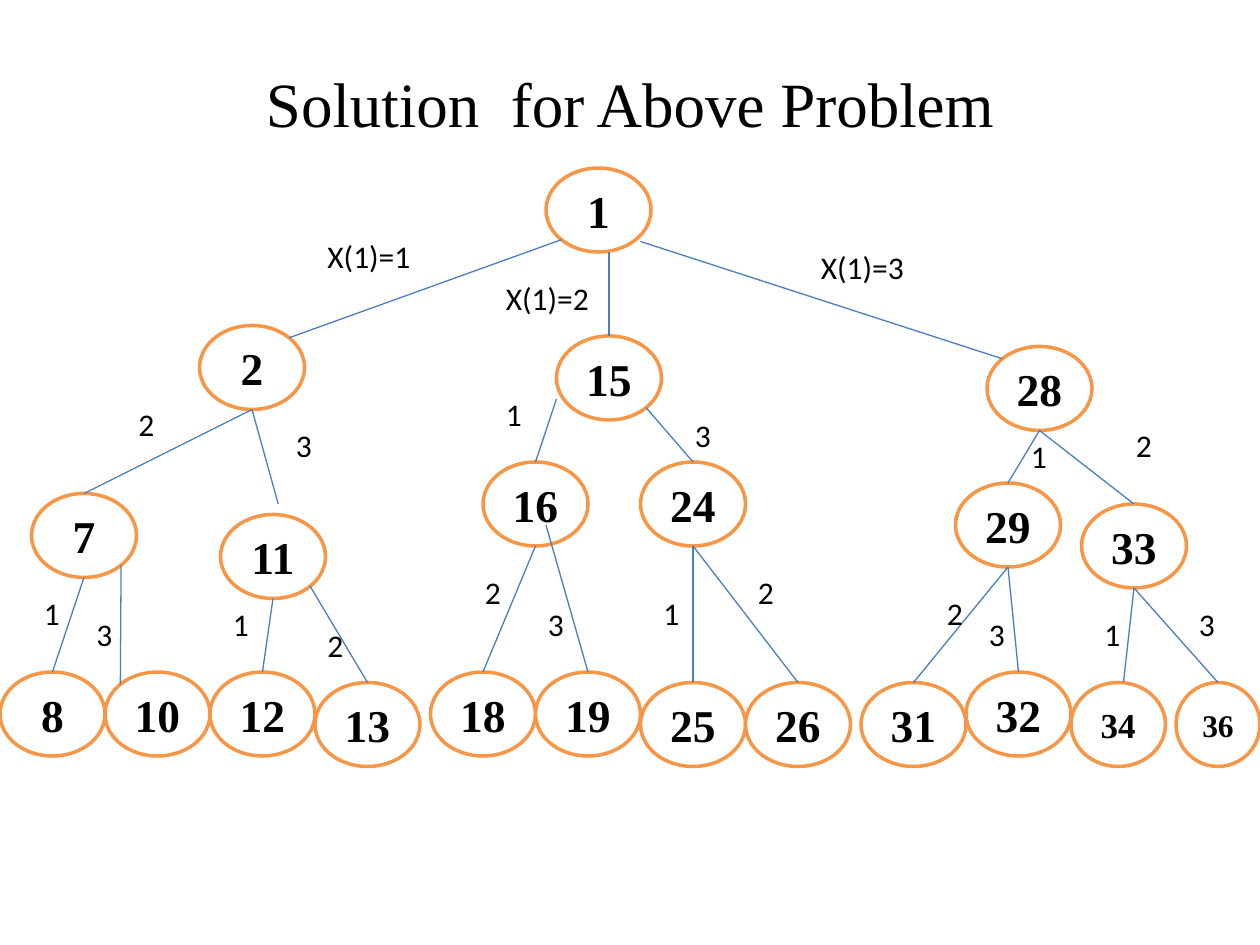
import math

import pptx
import pptx.dml.color
import pptx.enum.shapes
import pptx.enum.text
import pptx.oxml
import pptx.util

BLACK = pptx.dml.color.RGBColor(0x00, 0x00, 0x00)
WHITE = pptx.dml.color.RGBColor(0xFF, 0xFF, 0xFF)
ORANGE = pptx.dml.color.RGBColor(0xF7, 0x96, 0x46)
BLUE = pptx.dml.color.RGBColor(0x4B, 0x7E, 0xBC)
SERIF, SANS = "Times New Roman", "Calibri"
CENTER = pptx.enum.text.PP_ALIGN.CENTER
LEFT = pptx.enum.text.PP_ALIGN.LEFT

CELLS_PER_INCH = 12
NODE_WIDTH, NODE_HEIGHT = 10, 8
LABEL_HEIGHT = 4.8

# Left column and top row of each tree node
NODES = {
    1: (52, 16),
    2: (19, 31), 15: (53, 32), 28: (94, 33),
    7: (3, 47), 11: (21, 49), 16: (46, 44), 24: (61, 44), 29: (91, 46), 33: (103, 48),
    8: (0, 64), 10: (10, 64), 12: (20, 64), 13: (30, 65),
    18: (41, 64), 19: (51, 64), 25: (61, 65), 26: (71, 65),
    31: (82, 65), 32: (92, 64), 34: (102, 65), 36: (112, 65),
}
# Width and text size of the smaller leaves
SMALL_NODES = {34: (9, 20), 36: (8, 18)}

# Directions from a node's centre, in degrees clockwise from the right
TOP, BOTTOM = 270, 90
TOP_LEFT, TOP_RIGHT, BOTTOM_LEFT, BOTTOM_RIGHT = 225, 315, 135, 45

# Parent, child, choice, (column, row, width) of the choice
EDGES = [
    (1, 2, "X(1)=1", (30, 22, 10.4)),
    (1, 15, "X(1)=2", (47, 26, 10.4)),
    (1, 28, "X(1)=3", (77, 23, 10.4)),
    (2, 7, "2", (12, 38, 4)),
    (2, 11, "3", (27, 40, 4)),
    (15, 16, "1", (47, 37, 4)),
    (15, 24, "3", (65, 39, 4)),
    (28, 29, "1", (97, 41, 4)),
    (28, 33, "2", (107, 40, 4)),
    (7, 8, "1", (3, 56, 4)),
    (7, 10, "3", (8, 58, 3)),
    (11, 12, "1", (21, 57, 3)),
    (11, 13, "2", (30, 59, 3)),
    (16, 18, "2", (45, 54, 3)),
    (16, 19, "3", (51, 57, 3)),
    (24, 25, "1", (62, 56, 3)),
    (24, 26, "2", (71, 54, 3)),
    (29, 31, "2", (89, 56, 3)),
    (29, 32, "3", (93, 58, 4)),
    (33, 34, "1", (104, 58, 3)),
    (33, 36, "3", (113, 57, 3)),
]
# Edge ends that differ from bottom-to-top: a direction or a (column, row) point
STARTS = {
    (1, 2): BOTTOM_LEFT, (1, 15): (58, 24), (1, 28): (61, 23),
    (15, 16): (53, 38), (15, 24): BOTTOM_RIGHT,
    (7, 10): BOTTOM_RIGHT, (11, 13): BOTTOM_RIGHT, (16, 19): (52, 50),
}
ENDS = {
    (1, 2): TOP_RIGHT, (1, 28): TOP_LEFT, (2, 11): (26.5, 48),
    (7, 10): TOP_LEFT, (33, 34): (107, 65),
}


def cells(*counts):
    return [pptx.util.Inches(count / CELLS_PER_INCH) for count in counts]


def write(shape, text, *, font=SANS, size=18, bold=False, align=LEFT, wrap=False,
          anchor=pptx.enum.text.MSO_ANCHOR.TOP):
    frame = shape.text_frame
    frame.word_wrap = wrap
    frame.vertical_anchor = anchor
    paragraph = frame.paragraphs[0]
    paragraph.alignment = align
    run = paragraph.add_run()
    run.text = text
    run.font.name = font
    run.font.size = pptx.util.Pt(size)
    run.font.bold = bold
    run.font.color.rgb = BLACK


def add_title(slide, text):
    title = slide.shapes.title
    title.left, title.top, title.width, title.height = (
        pptx.util.Inches(length) for length in (0.5, 0.3, 9, 1.03))
    write(title, text, font=SERIF, size=36, align=CENTER, wrap=True,
          anchor=pptx.enum.text.MSO_ANCHOR.MIDDLE)


def add_node(slide, number):
    width, size = SMALL_NODES.get(number, (NODE_WIDTH, 26))
    node = slide.shapes.add_shape(pptx.enum.shapes.MSO_SHAPE.OVAL,
                                  *cells(*NODES[number], width, NODE_HEIGHT))
    node.shadow.inherit = False
    node.fill.solid()
    node.fill.fore_color.rgb = WHITE
    node.line.color.rgb = ORANGE
    node.line.width = pptx.util.Pt(2)
    write(node, str(number), font=SERIF, size=size, bold=True, align=CENTER,
          anchor=pptx.enum.text.MSO_ANCHOR.MIDDLE)


def edge_end(number, place):
    """Return a given point, or the point on the node's outline in a direction."""
    if isinstance(place, tuple):
        return place
    left, top = NODES[number]
    width, _ = SMALL_NODES.get(number, (NODE_WIDTH, 26))
    angle = math.radians(place)
    return (left + width / 2 * (1 + math.cos(angle)),
            top + NODE_HEIGHT / 2 * (1 + math.sin(angle)))


def add_edge(slide, parent, child):
    start = edge_end(parent, STARTS.get((parent, child), BOTTOM))
    end = edge_end(child, ENDS.get((parent, child), TOP))
    edge = slide.shapes.add_connector(pptx.enum.shapes.MSO_CONNECTOR.STRAIGHT,
                                      *cells(*start, *end))
    edge.line.color.rgb = BLUE
    edge.line.width = pptx.util.Pt(0.75)
    properties = edge.element.spPr
    properties.append(properties.makeelement(pptx.oxml.ns.qn("a:effectLst"), {}))


def add_choice(slide, text, column, row, width):
    choice = slide.shapes.add_textbox(*cells(column, row, width, LABEL_HEIGHT))
    write(choice, text, wrap=width < 4)


def main():
    presentation = pptx.Presentation()
    presentation.slide_width = pptx.util.Inches(10)
    presentation.slide_height = pptx.util.Inches(7.5)
    slide = presentation.slides.add_slide(presentation.slide_layouts[5])
    add_title(slide, "Solution  for Above Problem")
    for number in NODES:
        add_node(slide, number)
    for parent, child, choice, place in EDGES:
        add_edge(slide, parent, child)
        add_choice(slide, choice, *place)
    presentation.save("out.pptx")


if __name__ == "__main__":
    main()
